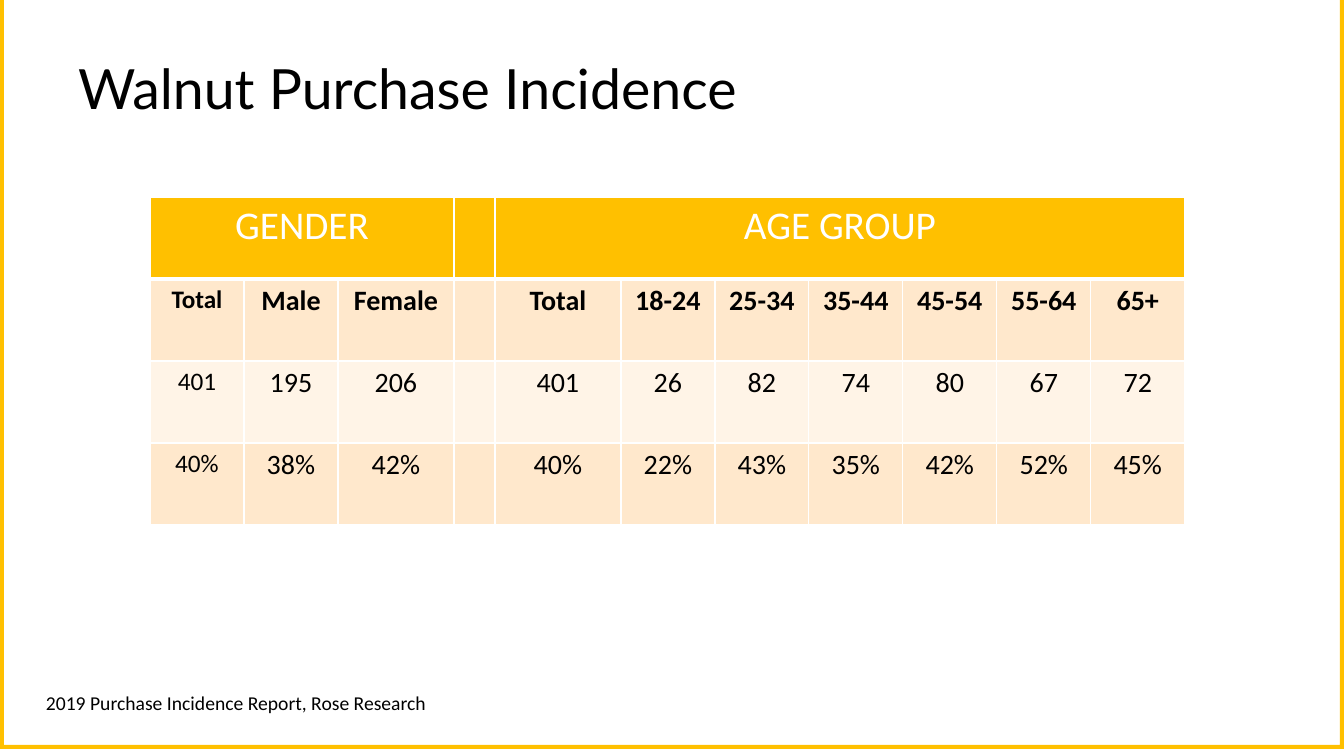
from dataclasses import dataclass

from lxml import etree
from pptx import Presentation
from pptx.dml.color import RGBColor
from pptx.enum.text import MSO_ANCHOR, MSO_AUTO_SIZE, PP_ALIGN
from pptx.oxml.ns import qn
from pptx.util import Pt

LEFT, CENTER = PP_ALIGN.LEFT, PP_ALIGN.CENTER
MIDDLE = MSO_ANCHOR.MIDDLE
NO_FIT, GROW = MSO_AUTO_SIZE.NONE, MSO_AUTO_SIZE.SHAPE_TO_FIT_TEXT
SCALE = 914400 / 100.8
WIDE, HIGH = 1344, 756


@dataclass
class Theme:
    gold: str = "FFC000"
    peach: str = "FFE8CC"
    cream: str = "FFF4E7"
    white: str = "FFFFFF"
    black: str = "000000"
    head: str = "Lato"
    body: str = "Calibri"
    title: float = 39.6
    band: int = 28
    cell: int = 20
    small: int = 18
    note: int = 14


def px(n):
    return round(n * SCALE)


def write(frame, text, font, size, color, bold=False, align=LEFT):
    para = frame.paragraphs[0]
    para.alignment = align
    run = para.add_run()
    run.text = text
    run.font.name = font
    run.font.size = Pt(size)
    run.font.bold = bold
    run.font.color.rgb = RGBColor.from_string(color)


class Deck:
    def __init__(self, theme):
        self.theme = theme
        self.show = Presentation()
        self.show.slide_width, self.show.slide_height = px(WIDE), px(HIGH)
        self.slide = self.show.slides.add_slide(self.show.slide_layouts[5])
        self.shapes = self.slide.shapes

    def place(self, shape, x, y, w, h):
        shape.left, shape.top, shape.width, shape.height = map(px, (x, y, w, h))

    def title(self, text, box):
        shape = self.shapes.title
        self.place(shape, *box)
        frame = shape.text_frame
        frame.margin_left = frame.margin_right = px(8)
        frame.margin_top = frame.margin_bottom = px(8)
        frame.vertical_anchor = MIDDLE
        frame.auto_size = NO_FIT
        write(frame, text, self.theme.head, self.theme.title, self.theme.black)

    def frame(self, edge, base):
        right, floor = WIDE - edge, base - edge
        points = [(edge, 0), (edge, floor), (right, floor), (right, 0),
                  (WIDE, 0), (WIDE, base), (0, base)]
        pen = self.shapes.build_freeform(0, 0, SCALE)
        pen.add_line_segments(points, close=True)
        shape = pen.convert_to_shape()
        shape.shadow.inherit = False
        shape.fill.solid()
        shape.fill.fore_color.rgb = RGBColor.from_string(self.theme.gold)
        shape.line.fill.background()

    def paint(self, cell, color, base):
        props = cell._tc.get_or_add_tcPr()
        for side, width in zip("LRTB", (1, 1, 1, base)):
            line = etree.SubElement(props, qn(f"a:ln{side}"), w=str(Pt(width)))
            fill = etree.SubElement(line, qn("a:solidFill"))
            etree.SubElement(fill, qn("a:srgbClr"), val=self.theme.white)
        cell.fill.solid()
        cell.fill.fore_color.rgb = RGBColor.from_string(color)

    def table(self, rows, x, y, cols, tall, spans):
        t = self.theme
        grid = self.shapes.add_table(len(rows), len(cols), px(x), px(y),
                                     px(sum(cols)), px(tall * len(rows))).table
        for col, width in zip(grid.columns, cols):
            col.width = px(width)
        for r, row in enumerate(rows):
            grid.rows[r].height = px(tall)
            fill = t.gold if r == 0 else t.peach if r % 2 else t.cream
            for c, text in enumerate(row):
                cell = grid.cell(r, c)
                self.paint(cell, fill, 3 if r == 0 else 1)
                size = t.band if r == 0 else t.small if c == 0 else t.cell
                if text:
                    write(cell.text_frame, text, t.body, size,
                          t.black if r else t.white, r == 1, CENTER)
        for first, last in spans:
            grid.cell(0, first).merge(grid.cell(0, last))

    def note(self, text, box):
        frame = self.shapes.add_textbox(*map(px, box)).text_frame
        frame.word_wrap = False
        frame.auto_size = GROW
        write(frame, text, self.theme.body, self.theme.note, self.theme.black)


def main():
    deck = Deck(Theme())
    deck.frame(4, 749)
    deck.title("Walnut Purchase Incidence", (70, 44, 1218, 86))
    rows = [
        ["GENDER", "", "", "", "AGE GROUP", "", "", "", "", "", ""],
        ["Total", "Male", "Female", "", "Total", "18-24", "25-34", "35-44",
         "45-54", "55-64", "65+"],
        ["401", "195", "206", "", "401", "26", "82", "74", "80", "67", "72"],
        ["40%", "38%", "42%", "", "40%", "22%", "43%", "35%", "42%", "52%",
         "45%"],
    ]
    cols = [94, 94, 116, 41, 126] + [94] * 6
    deck.table(rows, 150, 197, cols, 82, [(0, 2), (4, 10)])
    deck.note("2019 Purchase Incidence Report, Rose Research",
              (36, 686, 404, 34))
    deck.show.save("out.pptx")


if __name__ == "__main__":
    main()
